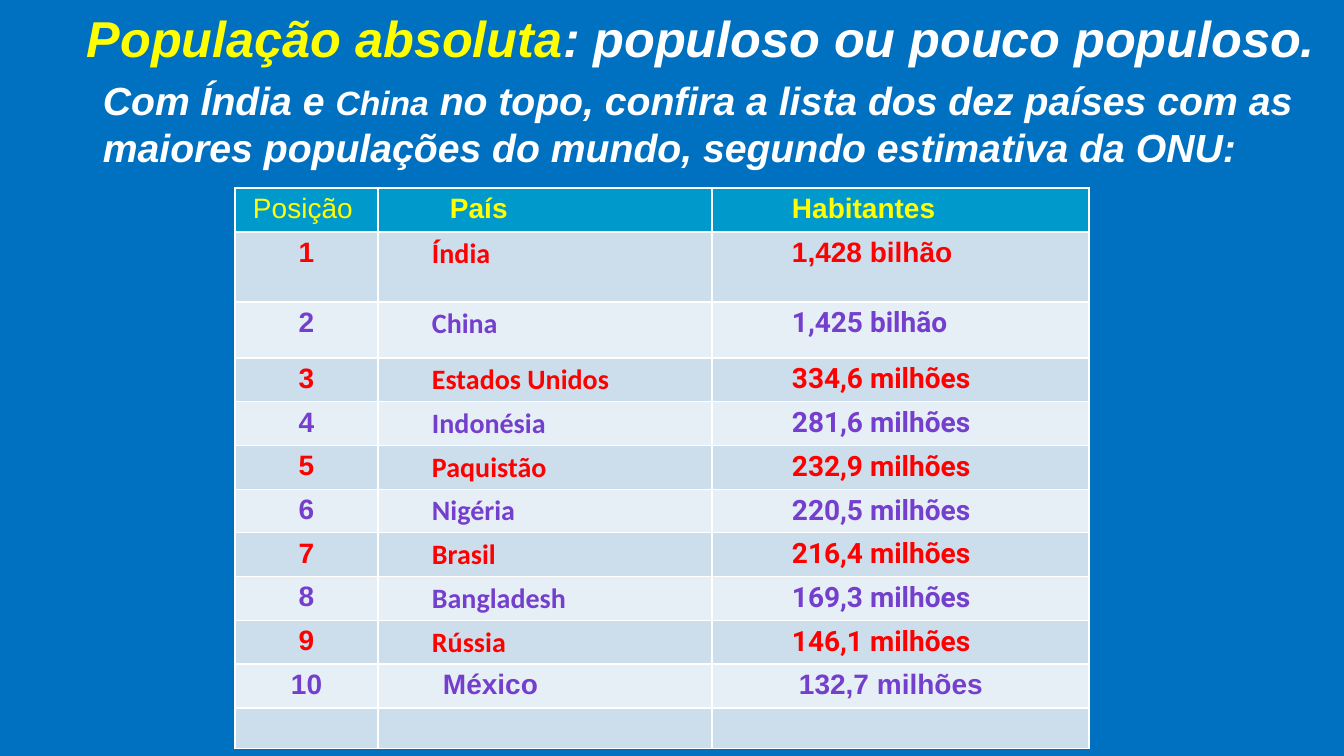
from lxml import etree
from pptx import Presentation
from pptx.dml.color import RGBColor
from pptx.enum.text import PP_ALIGN
from pptx.oxml.ns import qn
from pptx.util import Pt

PX = 914400 / 100.8
LEFT, CENTER = PP_ALIGN.LEFT, PP_ALIGN.CENTER
BLUE = RGBColor(0x00, 0x70, 0xC0)
TEAL = RGBColor(0x00, 0x99, 0xCC)
PALE = RGBColor(0xCC, 0xDE, 0xEC)
PALER = RGBColor(0xE7, 0xEF, 0xF6)
WHITE = RGBColor(0xFF, 0xFF, 0xFF)
YELLOW = RGBColor(0xFF, 0xFF, 0x00)
RED = RGBColor(0xFF, 0x00, 0x00)
PURPLE = RGBColor(0x75, 0x3F, 0xCE)


def px(length):
    return round(length * PX)


def add_text(frame, text, *, size=20, font="Arial", color=WHITE, bold=True,
             italic=False, align=LEFT):
    paragraph = frame.paragraphs[0]
    paragraph.alignment = align
    run = paragraph.add_run()
    run.text = text
    run.font.size = Pt(size)
    run.font.name = font
    run.font.color.rgb = color
    run.font.bold = bold
    run.font.italic = italic


prs = Presentation()
prs.slide_width, prs.slide_height = px(1344), px(756)
slide = prs.slides.add_slide(prs.slide_layouts[6])
slide.background.fill.solid()
slide.background.fill.fore_color.rgb = BLUE

headings = [
    ((93, 71, 1215, 136), [
        ("Com Índia e ", 28, WHITE),
        ("China", 24, WHITE),
        (" no topo, confira a lista dos dez países com as maiores populações "
         "do mundo, segundo estimativa da ONU:", 28, WHITE),
    ]),
    ((77, 2, 1294, 72), [
        ("População absoluta", 36, YELLOW),
        (": populoso ou pouco populoso.", 36, WHITE),
    ]),
]
for box, pieces in headings:
    heading = slide.shapes.add_textbox(*map(px, box)).text_frame
    heading.word_wrap = True
    for text, size, color in pieces:
        add_text(heading, text, size=size, color=color, italic=True)

countries = [
    ("Índia", "1,428 bilhão"),
    ("China", "1,425 bilhão"),
    ("Estados Unidos", "334,6 milhões"),
    ("Indonésia", "281,6 milhões"),
    ("Paquistão", "232,9 milhões"),
    ("Nigéria", "220,5 milhões"),
    ("Brasil", "216,4 milhões"),
    ("Bangladesh", "169,3 milhões"),
    ("Rússia", "146,1 milhões"),
    ("México", "132,7 milhões"),
]
column_widths = [143, 334, 377]
row_heights = [44, 70, 56] + [40] * 7 + [44, 40]
ranking = slide.shapes.add_table(
    len(row_heights), len(column_widths), px(235), px(188),
    px(sum(column_widths)), px(sum(row_heights))).table
for column, width in zip(ranking.columns, column_widths):
    column.width = px(width)
for row, height in zip(ranking.rows, row_heights):
    row.height = px(height)

for row_number, row in enumerate(ranking.rows):
    for cell in row.cells:
        properties = cell._tc.get_or_add_tcPr()
        for side in ("a:lnL", "a:lnR", "a:lnT", "a:lnB"):
            border = etree.SubElement(properties, qn(side), w=str(Pt(1)))
            border_fill = etree.SubElement(border, qn("a:solidFill"))
            etree.SubElement(border_fill, qn("a:srgbClr"), val=str(WHITE))
        cell.fill.solid()
        cell.fill.fore_color.rgb = (
            TEAL if row_number == 0 else PALE if row_number % 2 else PALER)

for column, (label, inset) in enumerate(
        [("Posição", 18), ("País", 72), ("Habitantes", 80)]):
    header = ranking.cell(0, column)
    header.margin_left = px(inset)
    add_text(header.text_frame, label, color=YELLOW, bold=column > 0)

for position, (country, inhabitants) in enumerate(countries, 1):
    color = RED if position % 2 else PURPLE
    last = position == len(countries)
    add_text(ranking.cell(position, 0).text_frame, str(position),
             color=color, align=CENTER)
    country_cell = ranking.cell(position, 1)
    country_cell.margin_left = px(65 if last else 54)
    add_text(country_cell.text_frame, country, color=color,
             font="Arial" if last else "Calibri")
    inhabitants_cell = ranking.cell(position, 2)
    inhabitants_cell.margin_left = px(87 if last else 80)
    add_text(inhabitants_cell.text_frame, inhabitants, color=color,
             font="Arial" if last or position == 1 else "Roboto")

prs.save("out.pptx")
